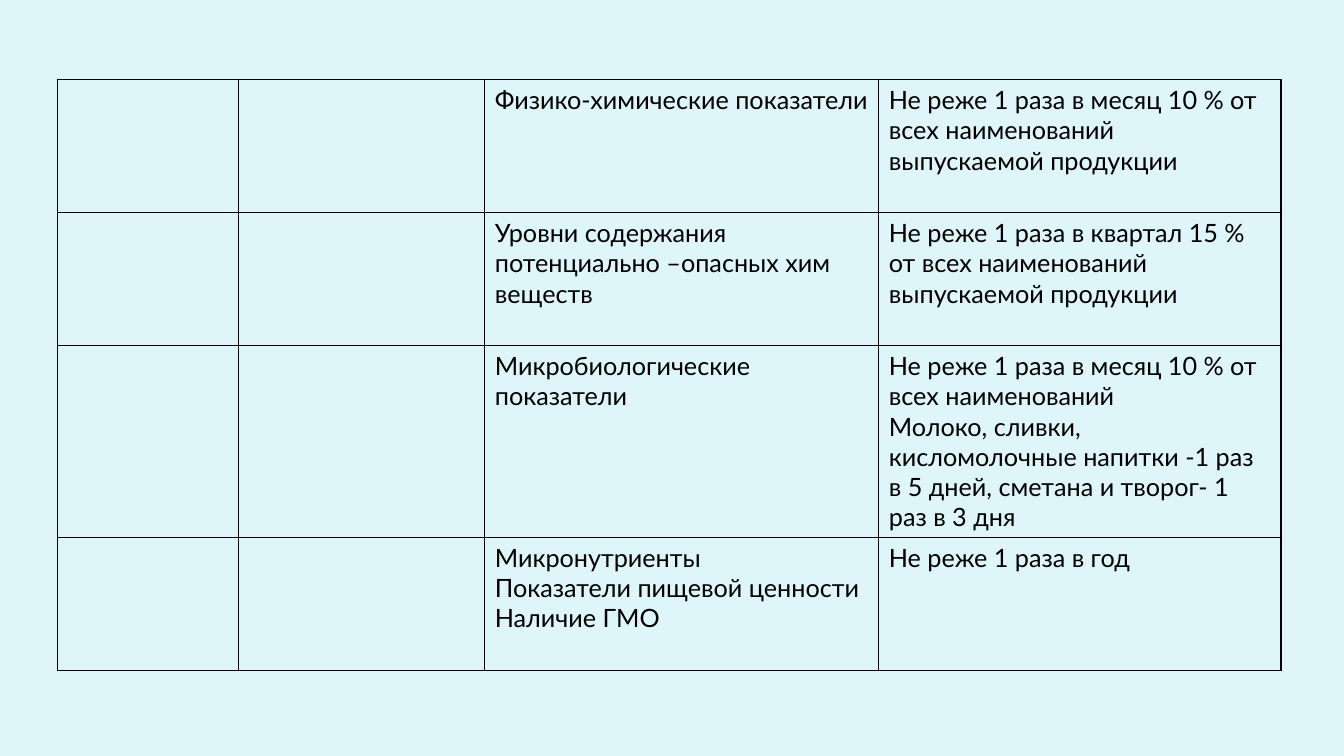
from dataclasses import dataclass

from lxml.etree import SubElement
from pptx import Presentation
from pptx.dml.color import RGBColor
from pptx.oxml.ns import qn
from pptx.slide import Slide
from pptx.table import _Cell as Cell
from pptx.util import Length, Pt


@dataclass(frozen=True)
class Theme:
    background: str = "DEF5FA"
    ink: str = "000000"
    font: str = "Lato"
    text_size: Length = Pt(18)
    border_width: Length = Pt(1)


@dataclass(frozen=True)
class ControlRow:
    indicators: tuple[str, ...]
    frequency: tuple[str, ...]
    height: Length = Pt(95)


THEME = Theme()
SLIDE_WIDTH, SLIDE_HEIGHT = Pt(960), Pt(540)
TABLE_LEFT, TABLE_TOP = Pt(41), Pt(56.9)
COLUMN_WIDTHS = (Pt(129.6), Pt(175.7), Pt(281.5), Pt(287.3))

CONTROL_ROWS = (
    ControlRow(
        ("Физико-химические показатели",),
        ("Не реже 1 раза в месяц 10 % от всех наименований выпускаемой продукции",),
    ),
    ControlRow(
        ("Уровни содержания потенциально –опасных хим веществ",),
        ("Не реже 1 раза в квартал 15 % от всех наименований выпускаемой продукции",),
    ),
    ControlRow(
        ("Микробиологические показатели",),
        (
            "Не реже 1 раза в месяц 10 % от всех наименований",
            "Молоко, сливки, кисломолочные напитки -1 раз в 5 дней, "
            "сметана и творог- 1 раз в 3 дня",
        ),
        Pt(136.8),
    ),
    ControlRow(
        ("Микронутриенты", "Показатели пищевой ценности", "Наличие ГМО"),
        ("Не реже 1 раза в год",),
    ),
)


def draw_borders(cell: Cell) -> None:
    properties = cell._tc.get_or_add_tcPr()
    for position, side in enumerate(("lnL", "lnR", "lnT", "lnB")):
        line = SubElement(properties, qn(f"a:{side}"), w=str(THEME.border_width))
        fill = SubElement(line, qn("a:solidFill"))
        SubElement(fill, qn("a:srgbClr"), val=THEME.ink)
        properties.insert(position, line)  # borders must precede the cell fill


def write_paragraphs(cell: Cell, lines: tuple[str, ...]) -> None:
    cell.text = "\n".join(lines)
    font_format = {"name": THEME.font, "size": THEME.text_size, "bold": False}
    for paragraph in cell.text_frame.paragraphs:
        for run in paragraph.runs:
            for attribute, value in font_format.items():
                setattr(run.font, attribute, value)
            run.font.color.rgb = RGBColor.from_string(THEME.ink)


def add_control_table(slide: Slide, rows: tuple[ControlRow, ...]) -> None:
    frame = slide.shapes.add_table(
        len(rows), len(COLUMN_WIDTHS), TABLE_LEFT, TABLE_TOP,
        sum(COLUMN_WIDTHS), sum(row.height for row in rows),
    )
    table = frame.table
    table_format = {"first_row": False, "horz_banding": False}
    for attribute, value in table_format.items():
        setattr(table, attribute, value)
    for column, width in zip(table.columns, COLUMN_WIDTHS):
        column.width = width
    for table_row, row in zip(table.rows, rows):
        table_row.height = row.height
        contents = ((), (), row.indicators, row.frequency)
        for cell, lines in zip(table_row.cells, contents):
            cell.fill.background()
            draw_borders(cell)
            if lines:
                write_paragraphs(cell, lines)


def main() -> None:
    presentation = Presentation()
    presentation.slide_width, presentation.slide_height = SLIDE_WIDTH, SLIDE_HEIGHT
    blank_layout = presentation.slide_layouts.get_by_name("Blank")
    slide = presentation.slides.add_slide(blank_layout)
    background = slide.background.fill
    background.solid()
    background.fore_color.rgb = RGBColor.from_string(THEME.background)
    add_control_table(slide, CONTROL_ROWS)
    presentation.save("out.pptx")


if __name__ == "__main__":
    main()
